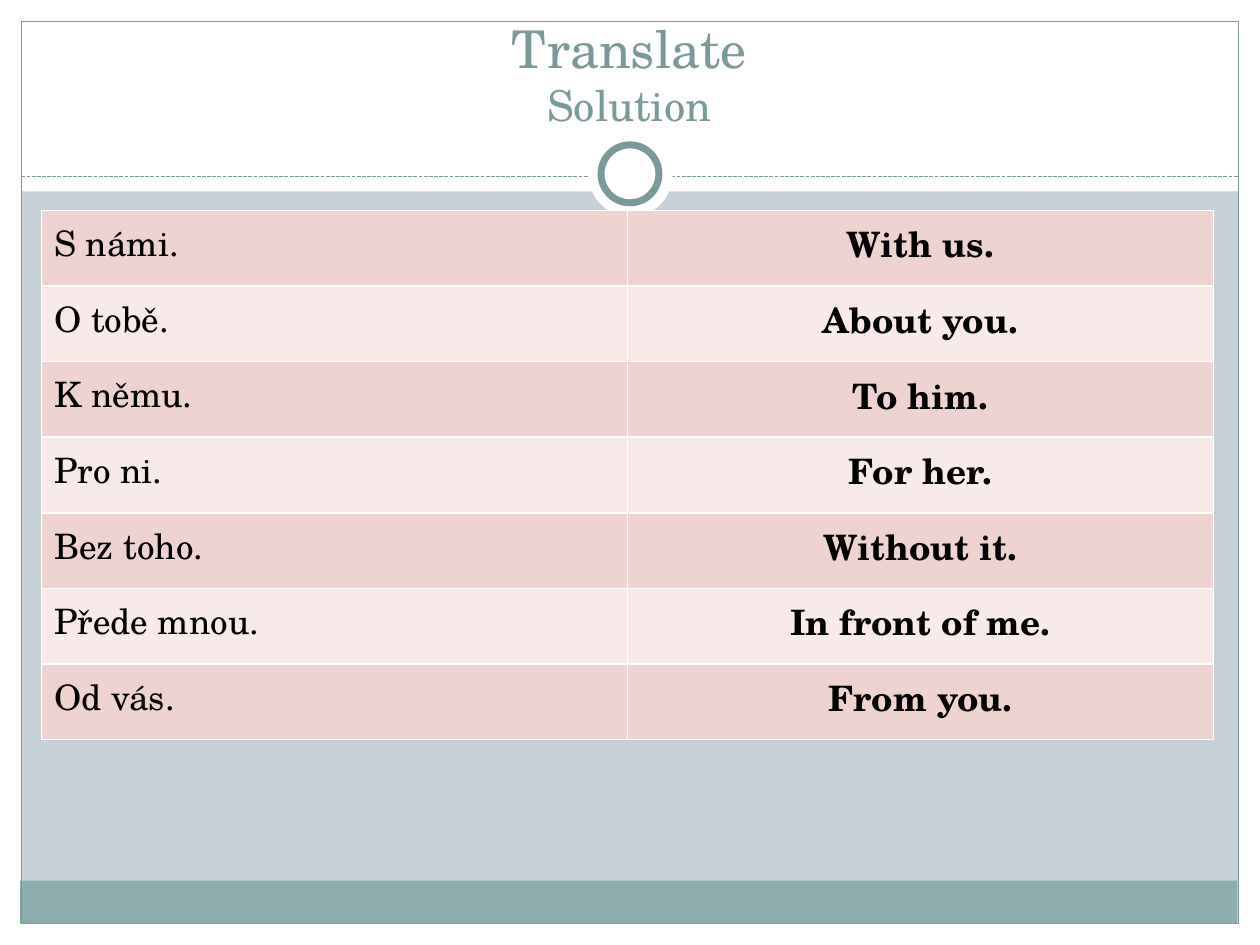
from dataclasses import dataclass
from typing import NamedTuple, Optional

import lxml.etree
import pptx
import pptx.dml.color
import pptx.enum.dml
import pptx.enum.shapes
import pptx.enum.text
import pptx.oxml.ns
import pptx.util

Inches = pptx.util.Inches
Pt = pptx.util.Pt
RGBColor = pptx.dml.color.RGBColor
ShapeKind = pptx.enum.shapes.MSO_SHAPE
Align = pptx.enum.text.PP_ALIGN
qn = pptx.oxml.ns.qn


@dataclass(frozen=True)
class Theme:
    font: str = "TeX Gyre Schola"
    backdrop: str = "C5D1D7"
    white: str = "FFFFFF"
    accent: str = "7C999A"
    footer: str = "8CADAE"
    text: str = "000000"
    bands: tuple[str, str] = ("EED3D0", "F7EAE9")
    title_size: float = 29.7
    subtitle_size: float = 24.3
    table_size: float = 20
    hairline: float = 0.75
    ring_line: float = 4
    cell_line: float = 1


class Panel(NamedTuple):
    left: float
    top: float
    width: float
    height: float
    fill: Optional[str] = None
    line: Optional[str] = None
    weight: float = 0
    kind: ShapeKind = ShapeKind.RECTANGLE


class Phrase(NamedTuple):
    czech: str
    english: str


THEME = Theme()
MARGIN = 0.17
EDGE = 10 - MARGIN
RULE_TOP = 1.4
TABLE_LEFT, TABLE_TOP = 0.33, 1.67
COLUMN_WIDTH, ROW_HEIGHT = 4.65, 0.6

PANELS = [
    Panel(0, 7.5 - MARGIN, 10, MARGIN, THEME.white),
    Panel(0, 0, 10, 1.52, THEME.white),
    Panel(0, 0, MARGIN, 7.5, THEME.white),
    Panel(EDGE, 0, MARGIN, 7.5, THEME.white),
    Panel(0.16, 6.99, 9.66, 0.34, THEME.footer),
    Panel(MARGIN, MARGIN, 9.66, 7.16, None, THEME.accent, THEME.hairline),
]
RINGS = [
    Panel(4.67, 1.05, 0.67, 0.67, THEME.white, kind=ShapeKind.OVAL),
    Panel(4.77, 1.15, 0.46, 0.46, THEME.white, THEME.accent, THEME.ring_line, ShapeKind.OVAL),
]
PHRASES = [
    Phrase("S námi.", "With us."),
    Phrase("O tobě.", "About you."),
    Phrase("K němu.", "To him."),
    Phrase("Pro ni.", "For her."),
    Phrase("Bez toho.", "Without it."),
    Phrase("Přede mnou.", "In front of me."),
    Phrase("Od vás.", "From you."),
]


def color(code: str) -> RGBColor:
    return RGBColor.from_string(code)


def paint(fill, code: Optional[str]) -> None:
    if code is None:
        fill.background()
    else:
        fill.solid()
        fill.fore_color.rgb = color(code)


def style_font(font, size: float, code: str, bold: bool = False) -> None:
    font.name = THEME.font
    font.size = Pt(size)
    font.bold = bold
    font.color.rgb = color(code)


def draw_panel(page, panel: Panel) -> None:
    box = page.shapes.add_shape(
        panel.kind,
        Inches(panel.left),
        Inches(panel.top),
        Inches(panel.width),
        Inches(panel.height),
    )
    box.shadow.inherit = False
    paint(box.fill, panel.fill)
    paint(box.line.fill, panel.line)
    if panel.line:
        box.line.width = Pt(panel.weight)


def draw_rule(page) -> None:
    rule = page.shapes.add_connector(
        pptx.enum.shapes.MSO_CONNECTOR.STRAIGHT,
        Inches(MARGIN),
        Inches(RULE_TOP),
        Inches(EDGE),
        Inches(RULE_TOP),
    )
    paint(rule.line.fill, THEME.accent)
    rule.line.width = Pt(THEME.hairline)
    rule.line.dash_style = pptx.enum.dml.MSO_LINE.SQUARE_DOT
    lxml.etree.SubElement(rule._element.spPr, qn("a:effectLst"))


def draw_title(page, heading: str, subheading: str) -> None:
    title = page.shapes.title
    title.left, title.top = Inches(0.33), Inches(0.25)
    title.width, title.height = Inches(9.33), Inches(0.83)
    frame = title.text_frame
    frame.word_wrap = True
    frame.auto_size = pptx.enum.text.MSO_AUTO_SIZE.NONE
    frame.vertical_anchor = pptx.enum.text.MSO_ANCHOR.BOTTOM
    para = frame.paragraphs[0]
    para.alignment = Align.CENTER
    style_font(para.font, THEME.title_size, THEME.accent)
    para.add_run().text = heading
    para.add_line_break()
    span = para.add_run()
    span.text = subheading
    span.font.size = Pt(THEME.subtitle_size)
    page.shapes._spTree.append(title._element)


def border_cell(cell) -> None:
    properties = cell._tc.get_or_add_tcPr()
    for index, side in enumerate(("a:lnL", "a:lnR", "a:lnT", "a:lnB")):
        line = lxml.etree.Element(qn(side), w=str(Pt(THEME.cell_line)))
        fill = lxml.etree.SubElement(line, qn("a:solidFill"))
        lxml.etree.SubElement(fill, qn("a:srgbClr"), val=THEME.white)
        properties.insert(index, line)


def fill_cell(cell, text: str, band: str, answer: bool) -> None:
    cell.text = text
    para = cell.text_frame.paragraphs[0]
    para.alignment = Align.CENTER if answer else Align.LEFT
    style_font(para.font, THEME.table_size, THEME.text, answer)
    paint(cell.fill, band)
    border_cell(cell)


def draw_table(page, phrases: list[Phrase]) -> None:
    columns = len(Phrase._fields)
    table = page.shapes.add_table(
        len(phrases),
        columns,
        Inches(TABLE_LEFT),
        Inches(TABLE_TOP),
        Inches(columns * COLUMN_WIDTH),
        Inches(len(phrases) * ROW_HEIGHT),
    ).table
    table.first_row = False
    table.horz_banding = False
    for row, phrase in enumerate(phrases):
        band = THEME.bands[row % 2]
        for column, text in enumerate(phrase):
            fill_cell(table.cell(row, column), text, band, column == 1)


def main() -> None:
    deck = pptx.Presentation()
    deck.slide_width, deck.slide_height = Inches(10), Inches(7.5)
    page = deck.slides.add_slide(deck.slide_layouts[5])
    paint(page.background.fill, THEME.backdrop)
    for panel in PANELS:
        draw_panel(page, panel)
    draw_rule(page)
    for ring in RINGS:
        draw_panel(page, ring)
    draw_title(page, "Translate", "Solution")
    draw_table(page, PHRASES)
    deck.save("out.pptx")


if __name__ == "__main__":
    main()
